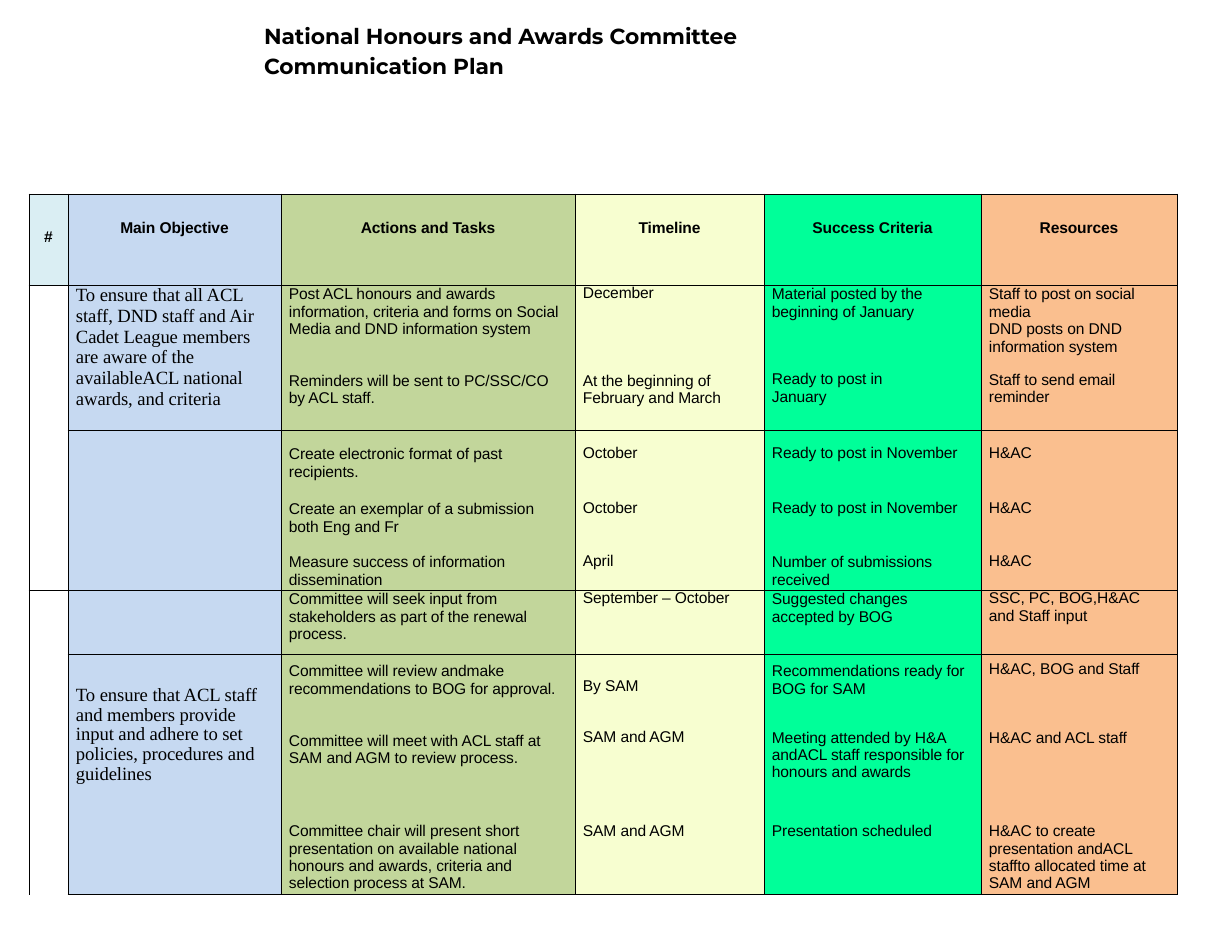
from copy import deepcopy

from lxml.etree import SubElement
from pptx import Presentation
from pptx.dml.color import RGBColor
from pptx.enum.text import MSO_ANCHOR, PP_ALIGN
from pptx.oxml.ns import qn
from pptx.util import Emu, Pt

PX = 914400 // 112
BLACK = "000000"
SANS, SERIF, DISPLAY = "Arial", "Times New Roman", "Montserrat"


def px(length):
    return Emu(round(length * PX))


def color(hex_string):
    return RGBColor.from_string(hex_string)


class PlanPage:
    """Holds the text style and the current slide."""

    line_height = {SANS: 18, SERIF: 21.4}

    def __init__(self, deck):
        self.page = deck.slides.add_slide(deck.slide_layouts[5])

    def format(self, para, font, size, bold=False):
        for span in para.runs:
            span.font.name, span.font.size, span.font.bold = font, Pt(size), bold
            span.font.color.rgb = color(BLACK)
            span._r.get_or_add_rPr().set("spc", "-5")
        # Line breaks need the size of the text around them
        for line_break in para._p.findall(qn("a:br")):
            line_break.insert(0, deepcopy(para.runs[0]._r.rPr))

    def title(self, text, left, top, width, height):
        box = self.page.shapes.title
        box.left, box.top, box.width, box.height = map(px, (left, top, width, height))
        frame = box.text_frame
        frame.text = text
        frame.word_wrap = True
        frame.vertical_anchor = MSO_ANCHOR.TOP
        frame.margin_left = frame.margin_top = px(1)
        frame.margin_right = frame.margin_bottom = 0
        para = frame.paragraphs[0]
        para.alignment = PP_ALIGN.LEFT
        para.line_spacing = 1.17
        self.format(para, DISPLAY, 14, True)

    def table(self, left, top, widths, heights):
        shape = self.page.shapes.add_table(len(heights), len(widths), px(left), px(top),
                                           px(sum(widths)), px(sum(heights)))
        grid = shape.table
        for column, width in zip(grid.columns, widths):
            column.width = px(width)
        for row, height in zip(grid.rows, heights):
            row.height = px(height)
        return grid

    def cell_style(self, cell, fill, top_line, bottom_line):
        cell.margin_left = cell.margin_right = cell.margin_top = cell.margin_bottom = 0
        properties = cell._tc.get_or_add_tcPr()
        sides = {"lnL": True, "lnR": True, "lnT": top_line, "lnB": bottom_line}
        for side, shown in sides.items():
            line = SubElement(properties, qn(f"a:{side}"), w=str(Pt(0.5)))
            if shown:
                paint = SubElement(line, qn("a:solidFill"))
                SubElement(paint, qn("a:srgbClr"), val=BLACK)
            else:
                SubElement(line, qn("a:noFill"))
        if fill:
            cell.fill.solid()
            cell.fill.fore_color.rgb = color(fill)
        else:
            cell.fill.background()

    def header(self, cell, text, offset):
        cell.margin_top = px(offset)
        cell.text_frame.text = text
        para = cell.text_frame.paragraphs[0]
        para.alignment = PP_ALIGN.CENTER
        self.format(para, SANS, 10, True)

    def entries(self, cell, items, font=SANS):
        """Each item is (offset from the top of the row, text[, line pitch])."""
        cell.margin_left, cell.margin_top = px(8), px(items[0][0])
        frame = cell.text_frame
        bottom = items[0][0]
        for index, (offset, text, *pitch) in enumerate(items):
            para = frame.add_paragraph() if index else frame.paragraphs[0]
            para.text = text
            if index:
                para.space_before = px(max(0, offset - bottom))
            if pitch:
                para.line_spacing = Pt(pitch[0])
            self.format(para, font, 12 if font == SERIF else 10)
            bottom = offset + self.line_height[font] * (text.count("\v") + 1)


COLUMNS = [("#", 39, "DAEEF3"), ("Main Objective", 213, "C6D9F1"),
           ("Actions and Tasks", 294, "C2D69B"), ("Timeline", 189, "F7FED0"),
           ("Success Criteria", 217, "00FF99"), ("Resources", 196, "FABF8F")]
HEIGHTS = [91, 145, 62, 54, 44, 64, 157, 84]

# First and last row of each ruled block
BLOCKS = [(0, 0), (1, 1), (2, 4), (5, 5), (6, 7)]
NUMBER_BLOCKS = [(0, 0), (1, 4), (5, 7)]

OBJECTIVES = {
    1: [(0, "To ensure that all ACL\vstaff, DND staff and Air"),
        (43, "Cadet League members\vare aware of the"),
        (86, "availableACL national\vawards, and criteria")],
    6: [(32, "To ensure that ACL staff\vand members provide\vinput and adhere to set\v"
             "policies, procedures and\vguidelines", 12.7)],
}

# Per row: actions, timeline, success criteria, resources
ROWS = [
    [[(1, "Post ACL honours and awards\vinformation, criteria and forms on Social\v"
          "Media and DND information system"),
      (89, "Reminders will be sent to PC/SSC/CO\vby ACL staff.")],
     [(0, "December"), (88, "At the beginning of\vFebruary and March")],
     [(1, "Material posted by the\vbeginning of January"), (87, "Ready to post in\vJanuary")],
     [(1, "Staff to post on social\vmedia"), (37, "DND posts on DND\vinformation system"),
      (89, "Staff to send email\vreminder")]],
    [[(16, "Create electronic format of past\vrecipients.")],
     [(15, "October")], [(15, "Ready to post in November")], [(15, "H&AC")]],
    [[(9, "Create an exemplar of a submission\vboth Eng and Fr")],
     [(8, "October")], [(8, "Ready to post in November")], [(8, "H&AC")]],
    [[(8, "Measure success of information\vdissemination")],
     [(7, "April")], [(8, "Number of submissions\vreceived")], [(7, "H&AC")]],
    [[(1, "Committee will seek input from\vstakeholders as part of the renewal\vprocess.")],
     [(0, "September – October")], [(1, "Suggested changes\vaccepted by BOG")],
     [(0, "SSC, PC, BOG,H&AC"), (18, "and Staff input")]],
    [[(9, "Committee will review andmake\vrecommendations to BOG for approval."),
      (80, "Committee will meet with ACL staff at\vSAM and AGM to review process.")],
     [(24, "By SAM"), (75, "SAM and AGM")],
     [(9, "Recommendations ready for\vBOG for SAM"),
      (78, "Meeting attended by H&A\vandACL staff responsible for\vhonours and awards", 10.7)],
     [(7, "H&AC, BOG and Staff"), (76, "H&AC and ACL staff")]],
    [[(12, "Committee chair will present short\vpresentation on available national\v"
           "honours and awards, criteria and\vselection process at SAM.")],
     [(12, "SAM and AGM")], [(12, "Presentation scheduled")],
     [(12, "H&AC to create\vpresentation andACL\vstaffto allocated time at\vSAM and AGM")]],
]


def main():
    deck = Presentation()
    deck.slide_width, deck.slide_height = px(1232), px(952)
    plan = PlanPage(deck)
    plan.title("National Honours and Awards Committee\vCommunication Plan", 263, 17, 495, 64)

    # Grid with fills and rules
    grid = plan.table(29, 194, [width for _, width, _ in COLUMNS], HEIGHTS)
    for index, (_, _, fill) in enumerate(COLUMNS):
        for first, last in BLOCKS if index else NUMBER_BLOCKS:
            for row in range(first, last + 1):
                shade = fill if index or row == 0 else None
                plan.cell_style(grid.cell(row, index), shade, row == first, row == last)
    for first, last in NUMBER_BLOCKS[1:]:
        grid.cell(first, 0).merge(grid.cell(last, 0))

    # Header row
    for index, (name, _, _) in enumerate(COLUMNS):
        plan.header(grid.cell(0, index), name, 26 if index else 35)

    # Objectives and plan entries
    for row, items in OBJECTIVES.items():
        plan.entries(grid.cell(row, 1), items, SERIF)
    for row, cells in enumerate(ROWS, start=1):
        for index, items in enumerate(cells, start=2):
            plan.entries(grid.cell(row, index), items)

    deck.save("out.pptx")


if __name__ == "__main__":
    main()
